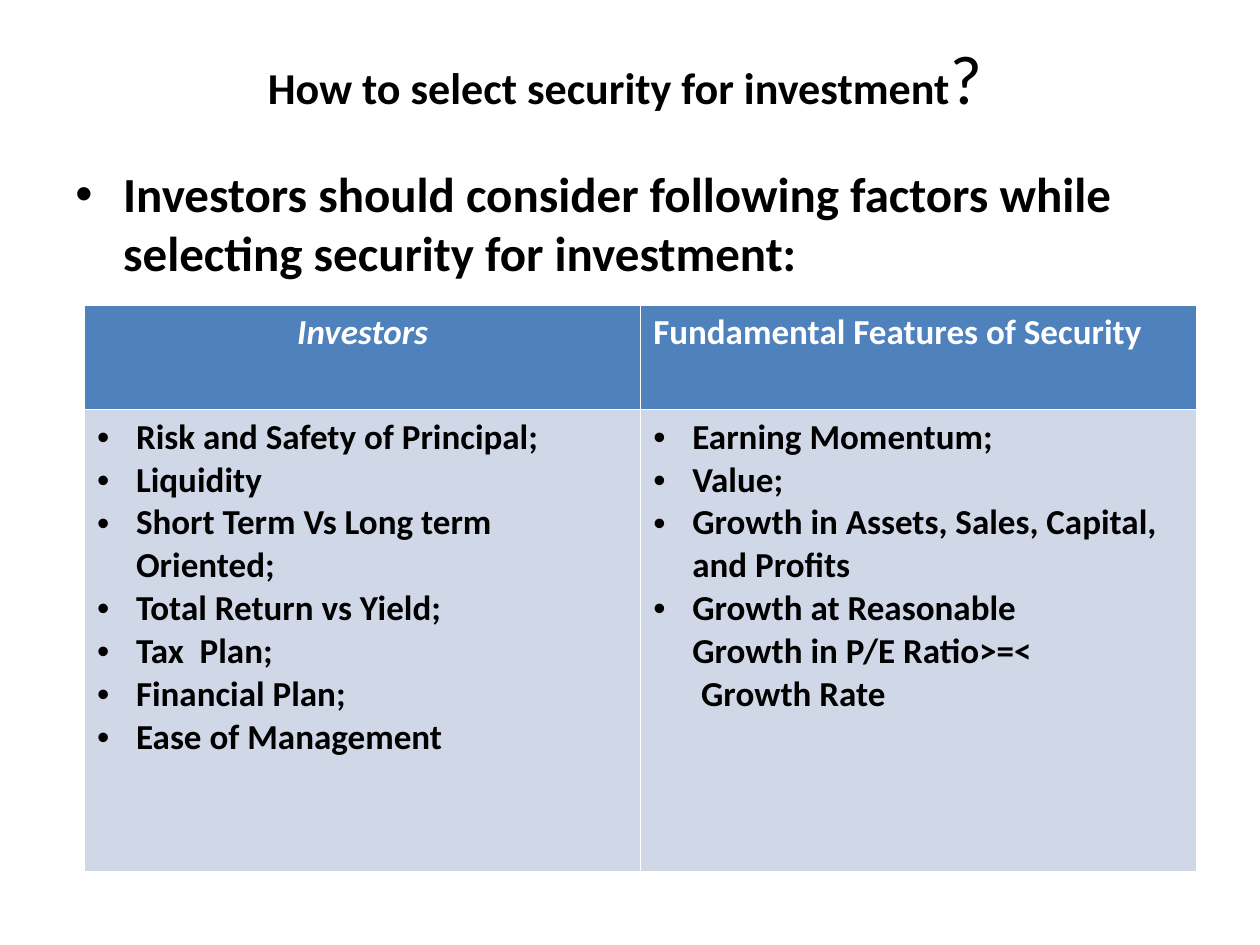
from dataclasses import dataclass

from lxml import etree
from pptx import Presentation
from pptx import util as u
from pptx.dml.color import RGBColor
from pptx.enum import text
from pptx.oxml.ns import qn


@dataclass(frozen=True)
class Theme:
    font: str = "Calibri"
    ink: str = "000000"
    header_ink: str = "FFFFFF"
    header_fill: str = "4F81BD"
    body_fill: str = "D0D8E8"
    title_size: float = 25.2
    question_size: float = 39.6
    lead_size: float = 28
    table_size: float = 20


@dataclass(frozen=True)
class Item:
    wording: str
    indent: float = 0.31
    bulleted: bool = True


@dataclass(frozen=True)
class Column:
    heading: str
    items: tuple[Item, ...]
    centred: bool = False


THEME = Theme()
COLUMNS = (
    Column("Investors", (
        Item("Risk and Safety of Principal;"),
        Item("Liquidity"),
        Item("Short Term Vs Long term Oriented;"),
        Item("Total Return vs Yield;"),
        Item("Tax  Plan;"),
        Item("Financial Plan;"),
        Item("Ease of Management"),
    ), centred=True),
    Column("Fundamental Features of Security", (
        Item("Earning Momentum;"),
        Item("Value;"),
        Item("Growth in Assets, Sales, Capital, and Profits"),
        Item("Growth at Reasonable"),
        Item("Growth in P/E Ratio>=<", bulleted=False),
        Item("Growth Rate", indent=0.38, bulleted=False),
    )),
)


def add_run(paragraph, wording: str, size: float, colour: str = THEME.ink,
            bold: bool = True, italic: bool = False) -> None:
    run = paragraph.add_run()
    run.text = wording
    font = run.font
    font.name, font.size = THEME.font, u.Pt(size)
    font.bold, font.italic = bold, italic
    font.color.rgb = RGBColor.from_string(colour)


def indent_paragraph(paragraph, indent: float, bulleted: bool = True) -> None:
    properties = paragraph._p.get_or_add_pPr()
    properties.set("marL", str(u.Inches(indent)))
    properties.set("indent", str(u.Inches(-indent if bulleted else 0)))
    if bulleted:
        etree.SubElement(properties, qn("a:buFont")).set("typeface", "Arial")
        etree.SubElement(properties, qn("a:buChar")).set("char", "•")


def add_text_frame(slide, left: float, top: float, width: float, height: float):
    box = slide.shapes.add_textbox(
        u.Inches(left), u.Inches(top), u.Inches(width), u.Inches(height))
    box.text_frame.word_wrap = True
    return box.text_frame


def add_title(slide) -> None:
    frame = add_text_frame(slide, 0.42, 0.3, 9.08, 0.62)
    frame.vertical_anchor = text.MSO_ANCHOR.MIDDLE
    paragraph = frame.paragraphs[0]
    paragraph.alignment = text.PP_ALIGN.CENTER
    add_run(paragraph, "How to select security for investment", THEME.title_size)
    add_run(paragraph, "?", THEME.question_size, bold=False)


def add_lead(slide) -> None:
    paragraph = add_text_frame(slide, 0.5, 1.25, 9, 5.45).paragraphs[0]
    paragraph.space_before = u.Pt(THEME.lead_size * 0.2)
    indent_paragraph(paragraph, 0.38)
    add_run(paragraph, "Investors should consider following factors while "
            "selecting security for investment:", THEME.lead_size)


def fill_cell(cell, colour: str) -> None:
    cell.fill.solid()
    cell.fill.fore_color.rgb = RGBColor.from_string(colour)


def add_factor_table(slide) -> None:
    table = slide.shapes.add_table(
        2, len(COLUMNS), u.Inches(0.67), u.Inches(2.42),
        u.Inches(8.83), u.Inches(4.5)).table
    for row, height in zip(table.rows, (0.83, 3.67)):
        row.height = u.Inches(height)
    for index, column in enumerate(COLUMNS):
        header, body = table.cell(0, index), table.cell(1, index)
        fill_cell(header, THEME.header_fill)
        fill_cell(body, THEME.body_fill)
        paragraph = header.text_frame.paragraphs[0]
        if column.centred:
            paragraph.alignment = text.PP_ALIGN.CENTER
        add_run(paragraph, column.heading, THEME.table_size,
                THEME.header_ink, italic=column.centred)
        frame = body.text_frame
        for position, item in enumerate(column.items):
            paragraph = frame.add_paragraph() if position else frame.paragraphs[0]
            indent_paragraph(paragraph, item.indent, item.bulleted)
            add_run(paragraph, item.wording, THEME.table_size)


def main() -> None:
    presentation = Presentation()
    presentation.slide_width = u.Inches(10)
    presentation.slide_height = u.Inches(7.5)
    slide = presentation.slides.add_slide(presentation.slide_layouts[6])
    add_title(slide)
    add_lead(slide)
    add_factor_table(slide)
    presentation.save("out.pptx")


if __name__ == "__main__":
    main()
